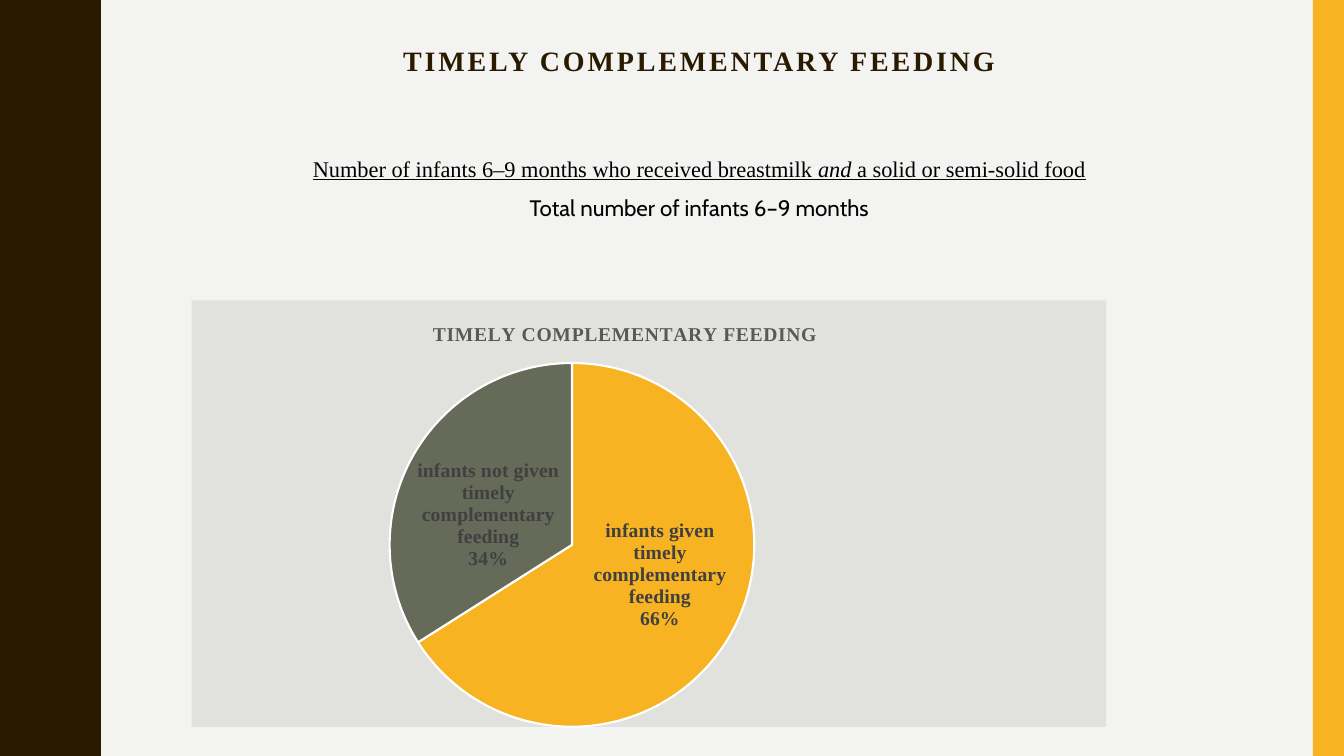
import pptx
import pptx.chart.data
import pptx.dml.color
import pptx.enum.chart
import pptx.enum.shapes
import pptx.enum.text
import pptx.oxml
import pptx.oxml.ns
import pptx.util

RGBColor = pptx.dml.color.RGBColor
Inches = pptx.util.Inches
Pt = pptx.util.Pt

BACKGROUND = RGBColor(0xF3, 0xF3, 0xF2)
BROWN = RGBColor(0x2A, 0x1A, 0x00)
YELLOW = RGBColor(0xF8, 0xB3, 0x23)
OLIVE = RGBColor(0x65, 0x6A, 0x59)
PANEL = RGBColor(0xE1, 0xE2, 0xDD)
TITLE_GREY = RGBColor(0x59, 0x59, 0x59)
LABEL_GREY = RGBColor(0x40, 0x40, 0x40)
WHITE = RGBColor(0xFF, 0xFF, 0xFF)
BLACK = RGBColor(0x00, 0x00, 0x00)
SERIF = "Times New Roman"
SANS = "Cabin"
WIDTH, HEIGHT = 13.33, 7.5
HEADING = "TIMELY COMPLEMENTARY FEEDING"


def format_font(font, name, size, color, bold=False):
    font.name = name
    font.size = Pt(size)
    font.color.rgb = color
    font.bold = bold


def add_text_frame(left, top, width, height):
    text_frame = slide.shapes.add_textbox(
        Inches(left), Inches(top), Inches(width), Inches(height)).text_frame
    text_frame.word_wrap = True
    text_frame.vertical_anchor = pptx.enum.text.MSO_ANCHOR.TOP
    return text_frame


presentation = pptx.Presentation()
presentation.slide_width = Inches(WIDTH)
presentation.slide_height = Inches(HEIGHT)
slide = presentation.slides.add_slide(presentation.slide_layouts[6])
slide.background.fill.solid()
slide.background.fill.fore_color.rgb = BACKGROUND

# Wavy left edge: one rising half wave, mirrored and repeated
WAVES = 5
wave_length = HEIGHT / WAVES
rising = [(0.78, 0), (0.78, 0.07), (0.79, 0.14), (0.8, 0.2), (0.81, 0.25),
          (0.83, 0.29), (0.85, 0.33), (0.87, 0.38), (0.89, 0.42), (0.91, 0.46),
          (0.93, 0.5), (0.95, 0.55), (0.96, 0.61), (0.97, 0.68), (0.97, 0.75)]
falling = [(x, wave_length - y) for x, y in reversed(rising[:-1])]
edge = [(x, wave * wave_length + y)
        for wave in range(WAVES) for x, y in rising + falling]
builder = slide.shapes.build_freeform(0, 0, scale=Inches(1))
builder.add_line_segments(edge + [(0, HEIGHT)], close=True)
wavy_edge = builder.convert_to_shape()

# Yellow right edge
BAND = 0.31
right_band = slide.shapes.add_shape(
    pptx.enum.shapes.MSO_SHAPE.RECTANGLE,
    Inches(WIDTH - BAND), 0, Inches(BAND), Inches(HEIGHT))

for shape, color in ((wavy_edge, BROWN), (right_band, YELLOW)):
    shape.shadow.inherit = False
    shape.fill.solid()
    shape.fill.fore_color.rgb = color
    shape.line.fill.background()

# Slide title
TEXT_LEFT, TEXT_WIDTH = 1.37, 11.13
title_frame = add_text_frame(TEXT_LEFT, 0.42, TEXT_WIDTH, 1)
title_frame.text = HEADING
title = title_frame.paragraphs[0]
title.alignment = pptx.enum.text.PP_ALIGN.CENTER
title.line_spacing = 0.9
format_font(title.runs[0].font, SERIF, 20, BROWN, bold=True)
title.runs[0]._r.get_or_add_rPr().set("spc", "200")

# Indicator as a fraction: underlined numerator above the denominator
formula = add_text_frame(TEXT_LEFT, 1.46, TEXT_WIDTH, 1.2)
numerator, denominator = formula.paragraphs[0], formula.add_paragraph()
for text, italic in (
        ("Number of infants 6–9 months who received breastmilk ", False),
        ("and ", True),
        ("a solid or semi-solid food", False)):
    run = numerator.add_run()
    run.text = text
    format_font(run.font, SERIF, 16, BLACK)
    run.font.italic = italic
    run.font.underline = True
denominator.text = "Total number of infants 6–9 months"
format_font(denominator.runs[0].font, SANS, 16, BLACK)
for paragraph in formula.paragraphs:
    paragraph.alignment = pptx.enum.text.PP_ALIGN.CENTER
    paragraph.line_spacing = 1.1
    paragraph.space_before = Pt(7)

# Pie chart
chart_data = pptx.chart.data.CategoryChartData()
chart_data.categories = ["infants given timely complementary feeding",
                         "infants not given timely complementary feeding"]
chart_data.add_series("Series 1", (66, 34))
chart = slide.shapes.add_chart(
    pptx.enum.chart.XL_CHART_TYPE.PIE,
    Inches(1.9), Inches(2.98), Inches(9.07), Inches(4.24), chart_data).chart
format_font(chart.font, SANS, 10, BLACK)
chart.has_legend = False
chart.has_title = True
chart.chart_title.text_frame.text = HEADING
chart_heading = chart.chart_title.text_frame.paragraphs[0].runs[0]
format_font(chart_heading.font, SERIF, 14, TITLE_GREY, bold=True)
chart_heading._r.get_or_add_rPr().set("spc", "30")

pie = chart.plots[0]
pie.vary_by_categories = True
for index, color in enumerate((YELLOW, OLIVE)):
    slice_format = pie.series[0].points[index].format
    slice_format.fill.solid()
    slice_format.fill.fore_color.rgb = color
    slice_format.line.color.rgb = WHITE
    slice_format.line.width = Pt(1.5)

pie.has_data_labels = True
labels = pie.data_labels
labels.show_category_name = True
labels.show_percentage = True
labels.show_value = False
labels.position = pptx.enum.chart.XL_LABEL_POSITION.INSIDE_END
format_font(labels.font, SERIF, 14, LABEL_GREY, bold=True)

# Chart panel fill, title place and plot place
namespace = pptx.oxml.ns.nsdecls("c", "a")
chart_space = chart._chartSpace
chart_space.chart.addnext(pptx.oxml.parse_xml(
    f'<c:spPr {namespace}><a:solidFill><a:srgbClr val="{PANEL}"/></a:solidFill>'
    '<a:ln><a:noFill/></a:ln></c:spPr>'))
title_place = '<c:x val="0.26"/><c:y val="0.04"/>'
plot_place = ('<c:layoutTarget val="inner"/>{}<c:x val="0.208"/><c:y val="0.147"/>'
              '<c:w val="0.416"/><c:h val="0.853"/>')
modes = '<c:xMode val="edge"/><c:yMode val="edge"/>'
plot_area = chart_space.chart.plotArea
chart_title = chart.chart_title._element
for parent, place in ((chart_title, modes + title_place),
                      (plot_area, plot_place.format(modes))):
    for old_layout in parent.findall(pptx.oxml.ns.qn("c:layout")):
        parent.remove(old_layout)
    layout = pptx.oxml.parse_xml(
        f'<c:layout {namespace}><c:manualLayout>{place}</c:manualLayout></c:layout>')
    parent.insert(1 if parent is chart_title else 0, layout)

presentation.save("out.pptx")
